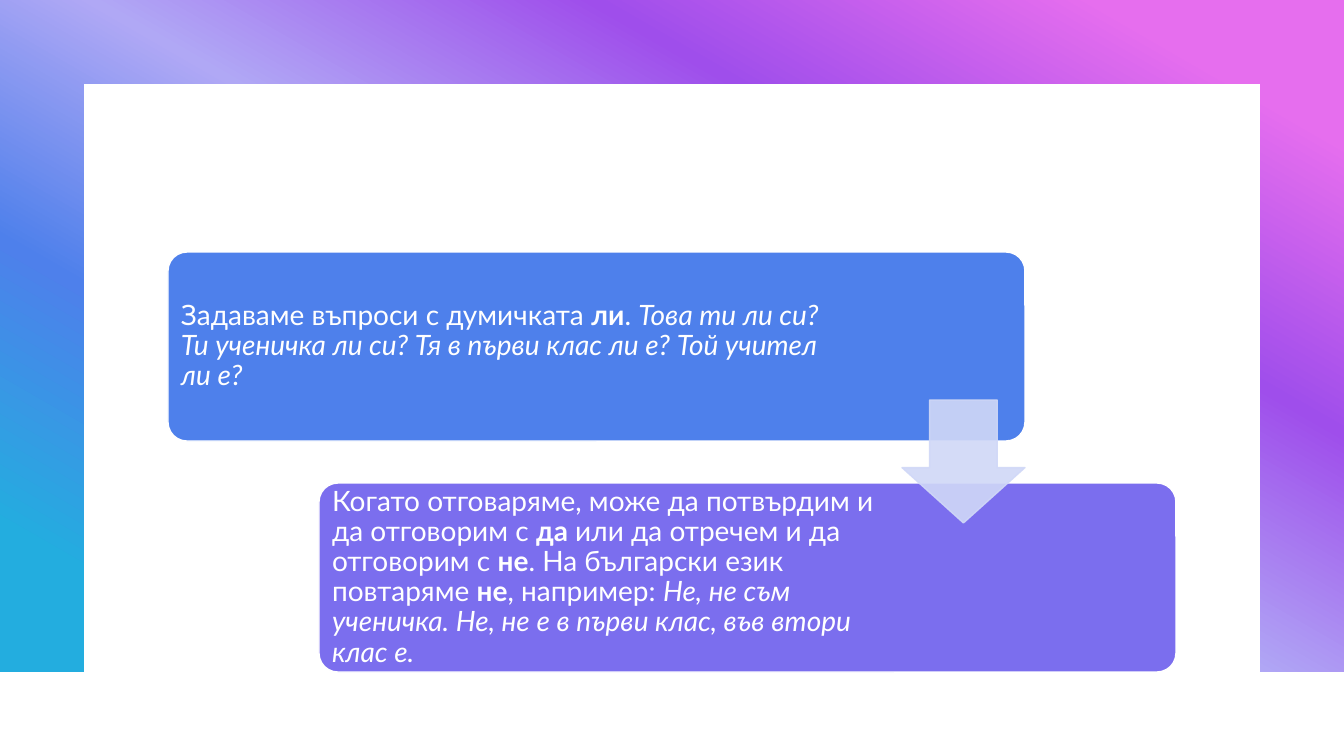
from lxml.etree import SubElement
from pptx import Presentation
from pptx.dml.color import RGBColor
from pptx.enum.shapes import MSO_SHAPE
from pptx.enum.text import MSO_ANCHOR
from pptx.oxml import parse_xml
from pptx.oxml.ns import nsdecls, qn
from pptx.util import Pt

COLOURS = {"white": "FFFFFF", "blue": "4E80EB", "violet": "7B6EEE", "arrow": "D0D8F7"}
GRADIENT_STOPS = [(10, "E66EEE"), (30, "9F4EEB"), (50, "B0A8F5"), (70, "4E80EB"), (90, "23ADDF")]
GRADIENT_ANGLE = 120

# Each step: fill, text width in px, runs of (text, style)
STEPS = [
    ("blue", 661, [
        ("Задаваме въпроси с думичката ", ""),
        ("ли", "bold"),
        (". ", ""),
        ("Това ти ли си? Ти ученичка ли си? Тя в първи клас ли е? Той учител ли е?", "italic"),
    ]),
    ("violet", 572, [
        ("Когато отговаряме, може да потвърдим и да отговорим с ", ""),
        ("да", "bold"),
        (" или да отречем и да отговорим с ", ""),
        ("не", "bold"),
        (". На български език повтаряме ", ""),
        ("не", "bold"),
        (", например: ", ""),
        ("Не, не съм ученичка. Не, не е в първи клас, във втори клас е.", "italic"),
    ]),
]

EMU_PER_PX = 914400 / 100.8
SLIDE_WIDTH, SLIDE_HEIGHT = 1344, 756
BAND_HEIGHT, MARGIN = 672, 84
STEP_LEFT, STEP_TOP, STEP_WIDTH, STEP_HEIGHT = 168, 252, 857, 189
STEP_SHIFT_X, STEP_SHIFT_Y = 151, 231
TEXT_OFFSET, TEXT_INSET = 5, 8
ARROW_SIZE = 123
ARROW_LEFT = STEP_LEFT + STEP_WIDTH - ARROW_SIZE
ARROW_TOP = 400


def px(*lengths):
    return [round(length * EMU_PER_PX) for length in lengths]


def add_panel(slide, kind, box, fill=None, line=None, adjustments=()):
    shape = slide.shapes.add_shape(kind, *px(*box))
    shape.shadow.inherit = False
    for index, value in enumerate(adjustments):
        shape.adjustments[index] = value
    if fill:
        shape.fill.solid()
        shape.fill.fore_color.rgb = RGBColor.from_string(COLOURS[fill])
    if line:
        shape.line.color.rgb = RGBColor.from_string(COLOURS[line])
        shape.line.width = Pt(1)
    else:
        shape.line.fill.background()
    return shape


def set_gradient(shape):
    stops = "".join(
        f'<a:gs pos="{position * 1000}"><a:srgbClr val="{colour}"/></a:gs>'
        for position, colour in GRADIENT_STOPS)
    gradient = parse_xml(
        f'<a:gradFill {nsdecls("a")} rotWithShape="1"><a:gsLst>{stops}</a:gsLst>'
        f'<a:lin ang="{GRADIENT_ANGLE * 60000}" scaled="0"/></a:gradFill>')
    shape._element.spPr.find(qn("a:prstGeom")).addnext(gradient)


def set_opacity(shape, percent):
    for colour in shape._element.spPr.iter(qn("a:srgbClr")):
        SubElement(colour, qn("a:alpha"), val=str(percent * 1000))


def add_text(slide, runs, box, size=20, font="Lato", colour="white", spacing=0.9):
    frame = slide.shapes.add_textbox(*px(*box)).text_frame
    frame.word_wrap = True
    frame.vertical_anchor = MSO_ANCHOR.MIDDLE
    inset = px(TEXT_INSET)[0]
    frame.margin_left = frame.margin_right = frame.margin_top = frame.margin_bottom = inset
    paragraph = frame.paragraphs[0]
    paragraph.line_spacing = spacing
    for text, style in runs:
        run = paragraph.add_run()
        run.text = text
        run.font.name = font
        run.font.size = Pt(size)
        run.font.bold = style == "bold"
        run.font.italic = style == "italic"
        run.font.color.rgb = RGBColor.from_string(COLOURS[colour])


def main():
    presentation = Presentation()
    presentation.slide_width, presentation.slide_height = px(SLIDE_WIDTH, SLIDE_HEIGHT)
    slide = presentation.slides.add_slide(presentation.slide_layouts[6])

    band = add_panel(slide, MSO_SHAPE.RECTANGLE, (0, 0, SLIDE_WIDTH, BAND_HEIGHT))
    set_gradient(band)
    add_panel(slide, MSO_SHAPE.RECTANGLE,
              (MARGIN, MARGIN, SLIDE_WIDTH - 2 * MARGIN, BAND_HEIGHT - MARGIN), fill="white")

    for index, (fill, text_width, runs) in enumerate(STEPS):
        left = STEP_LEFT + index * STEP_SHIFT_X
        top = STEP_TOP + index * STEP_SHIFT_Y
        add_panel(slide, MSO_SHAPE.ROUNDED_RECTANGLE, (left, top, STEP_WIDTH, STEP_HEIGHT),
                  fill=fill, line="white", adjustments=[0.1])
        add_text(slide, runs, (left + TEXT_OFFSET, top + TEXT_OFFSET,
                               text_width, STEP_HEIGHT - 2 * TEXT_OFFSET))

    arrow = add_panel(slide, MSO_SHAPE.DOWN_ARROW, (ARROW_LEFT, ARROW_TOP, ARROW_SIZE, ARROW_SIZE),
                      fill="arrow", line="arrow", adjustments=[0.55, 0.45])
    set_opacity(arrow, 90)
    presentation.save("out.pptx")


if __name__ == "__main__":
    main()
